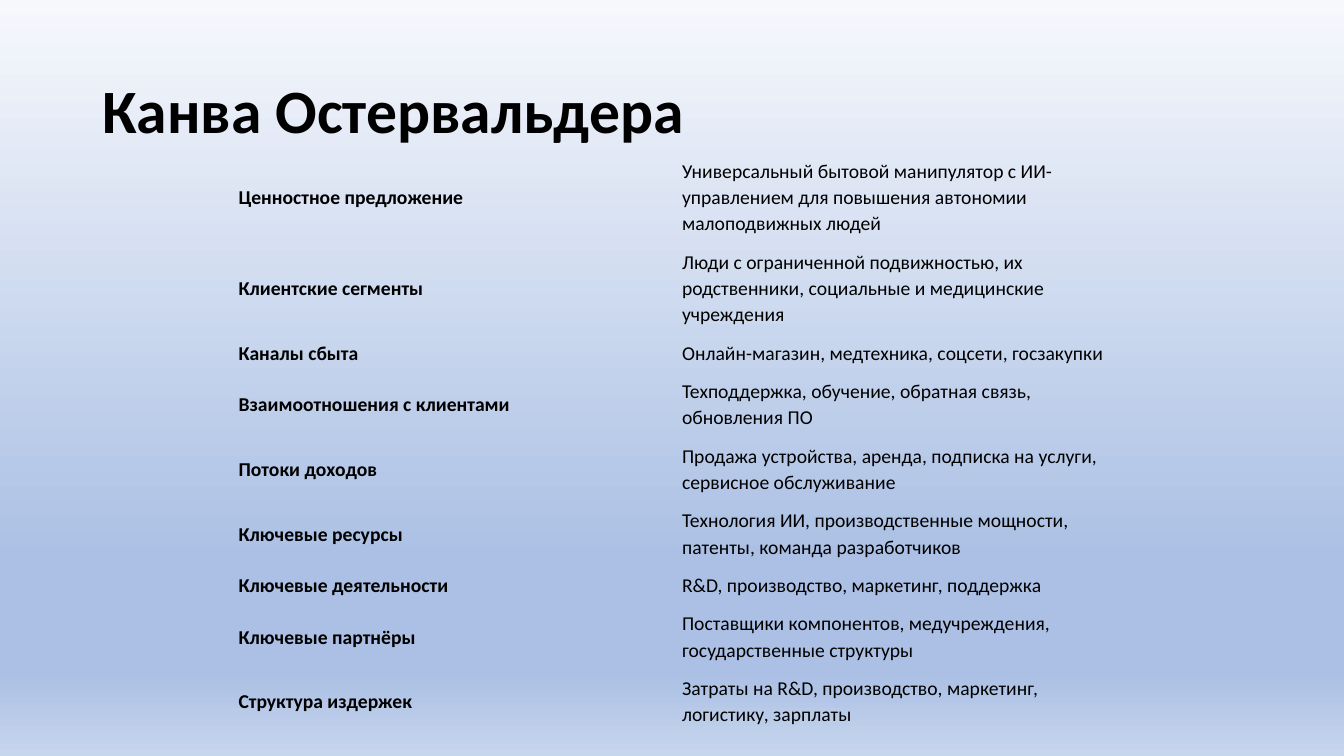
from copy import deepcopy

from pptx import Presentation
from pptx.dml.color import RGBColor
from pptx.enum.text import MSO_ANCHOR
from pptx.oxml.ns import qn
from pptx.util import Pt

BLACK = RGBColor(0x00, 0x00, 0x00)
PALE = RGBColor(0xF6, 0xF8, 0xFC)
BLUE = RGBColor(0xAB, 0xC0, 0xE4)
LIGHT_BLUE = RGBColor(0xC7, 0xD5, 0xED)
BACKGROUND_STOPS = [(0, PALE), (0.74, BLUE), (0.89, BLUE), (1, LIGHT_BLUE)]

FONT = "Calibri"
NO_STYLE_NO_GRID = "{2D5ABB26-0587-4C30-8999-92F81FD0307C}"
LINE_HEIGHT = 18.8
CELL_MARGIN = 4.3
OUTER_MARGIN = 5.8
INNER_MARGIN = 7.2
COLUMN_WIDTH = 315.4

# Block of the canvas, its description, lines the description takes
CANVAS = [
    ("Ценностное предложение",
     "Универсальный бытовой манипулятор с ИИ-управлением для повышения "
     "автономии малоподвижных людей", 3),
    ("Клиентские сегменты",
     "Люди с ограниченной подвижностью, их родственники, социальные и "
     "медицинские учреждения", 3),
    ("Каналы сбыта", "Онлайн-магазин, медтехника, соцсети, госзакупки", 1),
    ("Взаимоотношения с клиентами",
     "Техподдержка, обучение, обратная связь, обновления ПО", 2),
    ("Потоки доходов",
     "Продажа устройства, аренда, подписка на услуги, сервисное обслуживание", 2),
    ("Ключевые ресурсы",
     "Технология ИИ, производственные мощности, патенты, команда разработчиков", 2),
    ("Ключевые деятельности", "R&D, производство, маркетинг, поддержка", 1),
    ("Ключевые партнёры",
     "Поставщики компонентов, медучреждения, государственные структуры", 2),
    ("Структура издержек",
     "Затраты на R&D, производство, маркетинг, логистику, зарплаты", 2),
]


def write(frame, text, size, bold, line_spacing):
    para = frame.paragraphs[0]
    para.line_spacing = line_spacing
    span = para.add_run()
    span.text = text
    span.font.name = FONT
    span.font.size = Pt(size)
    span.font.bold = bold
    span.font.color.rgb = BLACK


deck = Presentation()
deck.slide_width = Pt(960)
deck.slide_height = Pt(540)
page = deck.slides.add_slide(deck.slide_layouts[6])

# Background
fill = page.background.fill
fill.gradient()
fill.gradient_angle = 270
stop_list = next(page.element.iter(qn("a:gsLst")))
while len(stop_list) < len(BACKGROUND_STOPS):
    stop_list.append(deepcopy(stop_list[0]))
for stop, (position, color) in zip(fill.gradient_stops, BACKGROUND_STOPS):
    stop.position = position
    stop.color.rgb = color

# Title
title = page.shapes.add_textbox(Pt(66), Pt(28.75), Pt(828), Pt(104.4))
title.text_frame.word_wrap = True
title.text_frame.vertical_anchor = MSO_ANCHOR.MIDDLE
write(title.text_frame, "Канва Остервальдера", 44, True, 0.9)

# Canvas table
row_heights = [lines * LINE_HEIGHT + 2 * CELL_MARGIN for _, _, lines in CANVAS]
table = page.shapes.add_table(
    len(CANVAS), 2, Pt(164.6), Pt(108), Pt(2 * COLUMN_WIDTH), Pt(sum(row_heights))
).table
table.first_row = False
table.horz_banding = False
next(page.element.iter(qn("a:tableStyleId"))).text = NO_STYLE_NO_GRID
for column in table.columns:
    column.width = Pt(COLUMN_WIDTH)

for row, height, (block, description, _) in zip(table.rows, row_heights, CANVAS):
    row.height = Pt(height)
    for index, (cell, text) in enumerate(zip(row.cells, (block, description))):
        is_block = index == 0
        cell.fill.background()
        cell.vertical_anchor = MSO_ANCHOR.MIDDLE
        cell.margin_top = cell.margin_bottom = Pt(CELL_MARGIN)
        cell.margin_left = Pt(OUTER_MARGIN if is_block else INNER_MARGIN)
        cell.margin_right = Pt(INNER_MARGIN if is_block else OUTER_MARGIN)
        write(cell.text_frame, text, 14, is_block, Pt(LINE_HEIGHT))

deck.save("out.pptx")
